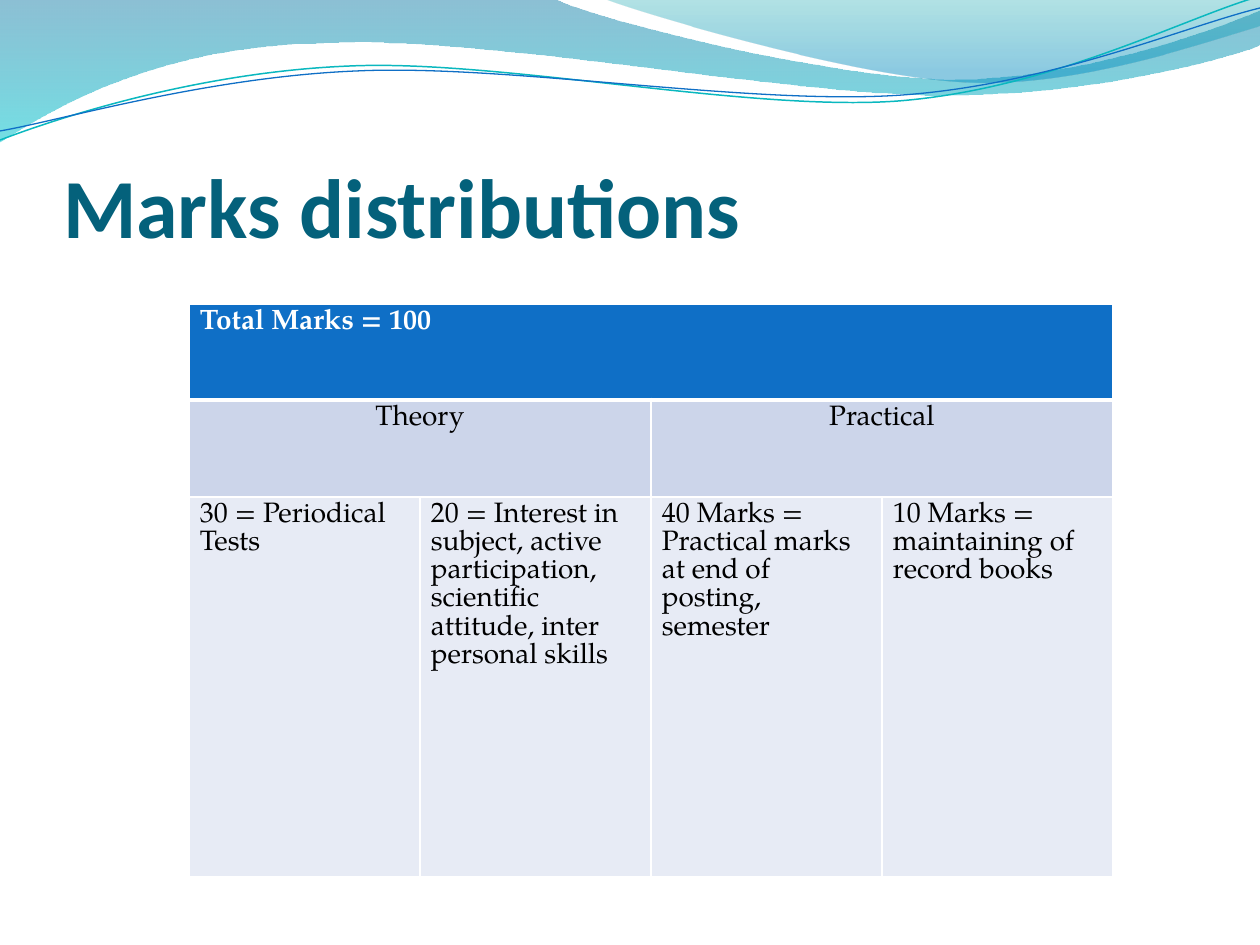
from lxml import etree
from pptx import Presentation
from pptx.dml.color import RGBColor
from pptx.enum.text import MSO_ANCHOR, MSO_AUTO_SIZE, PP_ALIGN
from pptx.oxml.ns import qn
from pptx.util import Pt

PX = 914400 // 126
LEFT, CENTER = PP_ALIGN.LEFT, PP_ALIGN.CENTER
BOTTOM = MSO_ANCHOR.BOTTOM
WHITE, BLUE = "FFFFFF", "0F6FC6"

TITLE = "Marks distributions"
# Each row: fill, height, alignment, column span of a cell, texts
ROWS = [
    (BLUE, 96, LEFT, 4, ["Total Marks = 100"]),
    ("CCD5EA", 97, CENTER, 2, ["Theory", "Practical"]),
    ("E7EBF5", 380, LEFT, 1, [
        "30 = Periodical Tests",
        "20 = Interest in subject, active participation, "
        "scientific attitude, inter personal skills",
        "40 Marks = Practical marks at end of posting, semester",
        "10 Marks = maintaining of record books"]),
]
COLS, COL_W = 4, 231
# Outlines: a start point, then lines (2 numbers) and Bezier curves (6 numbers)
# Gradient stops: position, colour, opacity in percent
WAVES = [
    ([(0, 0), (554, -1), (600, 21, 837, 79, 955, 79),
      (1075, 79, 1207, 33, 1260, 11), (1261, 45),
      (1239, 55, 1096, 96, 940, 95), (784, 95, 481, 35, 324, 43),
      (163, 45, 58, 105, -1, 142), (0, 0)],
     [(0, "0074A1", 45), (1, "00C6CF", 55)]),
    ([(604, -1), (641, 14, 859, 78, 969, 82),
      (1079, 87, 1211, 40, 1260, 26), (1260, 0), (604, -1)],
     [(0, "00A1A9", 30), (0.8, "008BBF", 45)]),
]
LINES = [
    ([(0, 140), (60, 117, 199, 72, 349, 66), (498, 59, 747, 112, 898, 101),
      (1050, 89, 1182, 19, 1257, -3)], "0AB8BF", 0.85),
    ([(0, 131), (59, 121, 207, 77, 357, 71), (508, 64, 752, 106, 903, 95),
      (1053, 84, 1186, 26, 1260, 8)], BLUE, 0.75),
]


def rgb(color):
    return RGBColor.from_string(color)


def put(frame, text, size, font, color, bold=False, align=LEFT):
    para = frame.paragraphs[0]
    para.alignment = align
    run = para.add_run()
    run.text = text
    run.font.size, run.font.name, run.font.bold = Pt(size), font, bold
    run.font.color.rgb = rgb(color)


def draw(shapes, outline, close):
    """Draw an outline, joining the three points of each curve into one."""
    points = [part[i:i + 2] for part in outline
              for i in range(0, len(part), 2)]
    pen = shapes.build_freeform(*points[0], scale=float(PX))
    pen.add_line_segments(points[1:], close=close)
    shape = pen.convert_to_shape()
    shape.shadow.inherit = False
    steps = iter(list(shape._element.spPr.iter(qn("a:lnTo"))))
    for part in outline[1:]:
        first = next(steps)
        if len(part) == 6:
            first.tag = qn("a:cubicBezTo")
            for step in (next(steps), next(steps)):
                first.append(step[0])
                step.getparent().remove(step)
    return shape


def add_wave(shapes, outline, stops):
    shape = draw(shapes, outline, True)
    shape.line.fill.background()
    shape.fill.gradient()
    shape.fill.gradient_angle = 270
    for stop, (place, color, _) in zip(shape.fill.gradient_stops, stops):
        stop.position = place
        stop.color.rgb = rgb(color)
    tints = shape._element.spPr.iter(qn("a:srgbClr"))
    for tint, (_, _, alpha) in zip(list(tints), stops):
        etree.SubElement(tint, qn("a:alpha"), val=str(alpha * 1000))


def add_line(shapes, outline, color, width):
    shape = draw(shapes, outline, False)
    shape.fill.background()
    shape.line.color.rgb = rgb(color)
    shape.line.width = Pt(width)


def edge(cell, **widths):
    """Give a cell white borders, with widths in points by side."""
    props = cell._tc.get_or_add_tcPr()
    for side in "LRTB":
        width = Pt(widths.get(side, 1))
        line = etree.SubElement(props, qn("a:ln" + side), w=str(width))
        fill = etree.SubElement(line, qn("a:solidFill"))
        etree.SubElement(fill, qn("a:srgbClr"), val=WHITE)


def add_marks(shapes):
    high = sum(row[1] for row in ROWS)
    table = shapes.add_table(len(ROWS), COLS, 189 * PX, 304 * PX,
                             COLS * COL_W * PX, high * PX).table
    for col in table.columns:
        col.width = COL_W * PX
    for r, (fill, height, align, span, texts) in enumerate(ROWS):
        table.rows[r].height = height * PX
        head = r == 0
        for c in range(COLS):
            cell = table.cell(r, c)
            edge(cell, B=3 if head else 1, T=3 if r == 1 else 1)
            cell.fill.solid()
            cell.fill.fore_color.rgb = rgb(fill)
            cell.margin_left = cell.margin_right = 11 * PX
            cell.margin_top = cell.margin_bottom = 5 * PX
        for i, text in enumerate(texts):
            cell = table.cell(r, i * span)
            if span > 1:
                cell.merge(table.cell(r, (i + 1) * span - 1))
            put(cell.text_frame, text, 16, "TeX Gyre Pagella",
                WHITE if head else "000000", bold=head, align=align)


def add_title(title):
    title.left, title.top = 63 * PX, 97 * PX
    title.width, title.height = 1134 * PX, 158 * PX
    frame = title.text_frame
    frame.auto_size = MSO_AUTO_SIZE.NONE
    frame.vertical_anchor = BOTTOM
    frame.margin_left = frame.margin_right = frame.margin_bottom = 0
    frame.margin_top = 6 * PX
    put(frame, TITLE, 48, "Calibri", "04617B", bold=True)


def main():
    deck = Presentation()
    deck.slide_width, deck.slide_height = 1260 * PX, 945 * PX
    slide = deck.slides.add_slide(deck.slide_layouts[5])
    for wave in WAVES:
        add_wave(slide.shapes, *wave)
    for line in LINES:
        add_line(slide.shapes, *line)
    add_title(slide.shapes.title)
    add_marks(slide.shapes)
    deck.save("out.pptx")


if __name__ == "__main__":
    main()
